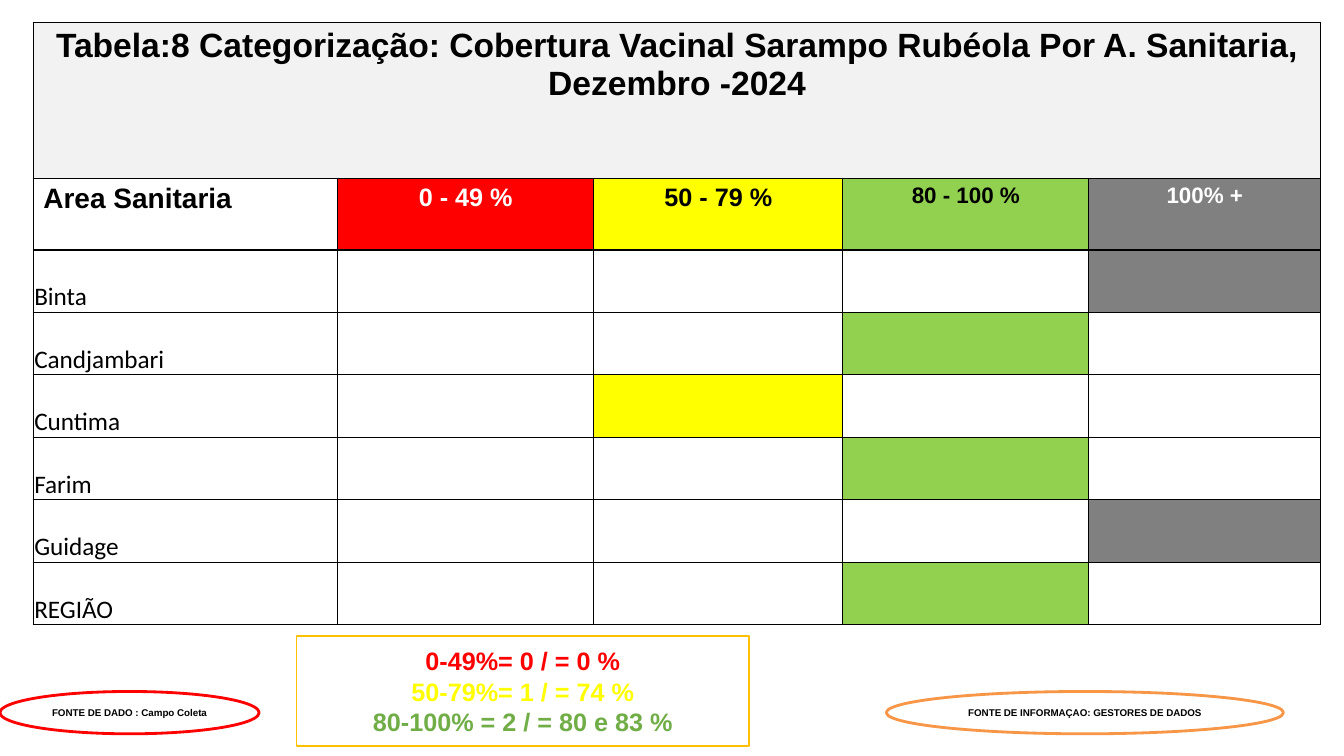
from pptx import Presentation
from pptx.dml.color import RGBColor
from pptx.enum.shapes import MSO_SHAPE
from pptx.enum.text import MSO_ANCHOR, PP_ALIGN
from pptx.oxml.ns import qn
from pptx.util import Inches, Pt
from lxml import etree

RECT, OVAL = MSO_SHAPE.RECTANGLE, MSO_SHAPE.OVAL
LEFT, CENTER = PP_ALIGN.LEFT, PP_ALIGN.CENTER
TOP, MIDDLE, BOTTOM = MSO_ANCHOR.TOP, MSO_ANCHOR.MIDDLE, MSO_ANCHOR.BOTTOM

BLACK = RGBColor(0x00, 0x00, 0x00)
WHITE = RGBColor(0xFF, 0xFF, 0xFF)
LIGHT = RGBColor(0xF2, 0xF2, 0xF2)
RED = RGBColor(0xFF, 0x00, 0x00)
YELLOW = RGBColor(0xFF, 0xFF, 0x00)
GREEN = RGBColor(0x92, 0xD0, 0x50)
GRAY = RGBColor(0x80, 0x80, 0x80)
DARK_GREEN = RGBColor(0x70, 0xAD, 0x47)
ORANGE = RGBColor(0xF7, 0x96, 0x46)
GOLD = RGBColor(0xFF, 0xC0, 0x00)

TITLE = ("Tabela:8 Categorização: Cobertura Vacinal Sarampo Rubéola "
         "Por A. Sanitaria, Dezembro -2024")
BANDS = [("0 - 49 %", RED, WHITE, 18), ("50 - 79 %", YELLOW, BLACK, 18),
         ("80 - 100 %", GREEN, BLACK, 16), ("100% +", GRAY, WHITE, 16)]
AREAS = [("Binta", 4), ("Candjambari", 3), ("Cuntima", 2),
         ("Farim", 3), ("Guidage", 4), ("REGIÃO", 3)]
COL_WIDTHS = [3.02, 2.54, 2.47, 2.44, 2.3]
TITLE_HEIGHT, HEADER_HEIGHT, AREA_HEIGHT = 1.55, 0.71, 0.62


def add_text(tf, text, size=18, color=BLACK, bold=True, font="Arial",
             align=CENTER, first=True):
    p = tf.paragraphs[0] if first else tf.add_paragraph()
    p.alignment = align
    r = p.add_run()
    r.text = text
    r.font.size = Pt(size)
    r.font.bold = bold
    r.font.name = font
    r.font.color.rgb = color


def set_borders(cell):
    tcPr = cell._tc.get_or_add_tcPr()
    for side in ("a:lnL", "a:lnR", "a:lnT", "a:lnB"):
        ln = etree.SubElement(tcPr, qn(side), w=str(Pt(1)))
        fill = etree.SubElement(ln, qn("a:solidFill"))
        etree.SubElement(fill, qn("a:srgbClr"), val=str(BLACK))


def paint(cell, color):
    cell.fill.solid()
    cell.fill.fore_color.rgb = color


def add_coverage_table(s, left, top):
    heights = [TITLE_HEIGHT, HEADER_HEIGHT] + [AREA_HEIGHT] * len(AREAS)
    frame = s.shapes.add_table(len(heights), len(COL_WIDTHS), Inches(left), Inches(top),
                               Inches(sum(COL_WIDTHS)), Inches(sum(heights)))
    table = frame.table
    table.first_row = table.horz_banding = False
    for col, width in zip(table.columns, COL_WIDTHS):
        col.width = Inches(width)
    for row, height in zip(table.rows, heights):
        row.height = Inches(height)
        for cell in row.cells:
            set_borders(cell)
            cell.fill.background()

    title = table.cell(0, 0)
    title.merge(table.cell(0, len(COL_WIDTHS) - 1))
    paint(title, LIGHT)
    add_text(title.text_frame, TITLE, size=24)

    add_text(table.cell(1, 0).text_frame, "Area Sanitaria", size=20, align=LEFT)
    for c, (label, fill, color, size) in enumerate(BANDS, 1):
        cell = table.cell(1, c)
        paint(cell, fill)
        add_text(cell.text_frame, label, size=size, color=color)

    for r, (area, band) in enumerate(AREAS, 2):
        cell = table.cell(r, 0)
        cell.vertical_anchor = BOTTOM
        cell.margin_left = cell.margin_right = cell.margin_top = Inches(0.01)
        cell.margin_bottom = 0
        add_text(cell.text_frame, area, bold=False, font="Calibri", align=LEFT)
        paint(table.cell(r, band), BANDS[band - 1][1])


def add_note(s, kind, box, lines, line_color, line_width, size, fill=None):
    sp = s.shapes.add_shape(kind, *map(Inches, box))
    sp.shadow.inherit = False
    if fill is None:
        sp.fill.background()
    else:
        sp.fill.solid()
        sp.fill.fore_color.rgb = fill
    sp.line.color.rgb = line_color
    sp.line.width = Pt(line_width)
    tf = sp.text_frame
    tf.word_wrap = True
    tf.vertical_anchor = MIDDLE
    for i, (text, color) in enumerate(lines):
        add_text(tf, text, size=size, color=color, first=i == 0)


def main():
    prs = Presentation()
    prs.slide_width, prs.slide_height = Inches(13.33), Inches(7.5)
    s = prs.slides.add_slide(prs.slide_layouts.get_by_name("Blank"))
    add_coverage_table(s, 0.33, 0.22)
    add_note(s, OVAL, (0, 6.86, 2.57, 0.42),
             [("FONTE DE DADO : Campo Coleta", BLACK)], RED, 2, 7)
    add_note(s, OVAL, (8.79, 6.86, 3.94, 0.42),
             [("FONTE DE INFORMAÇAO: GESTORES DE DADOS", BLACK)], ORANGE, 2, 7, WHITE)
    add_note(s, RECT, (2.94, 6.31, 4.49, 1.09),
             [("0-49%= 0 / = 0 %", RED), ("50-79%= 1 / = 74 %", YELLOW),
              ("80-100% = 2 / = 80 e 83 %", DARK_GREEN)], GOLD, 1, 18, WHITE)
    prs.save("out.pptx")


if __name__ == "__main__":
    main()
